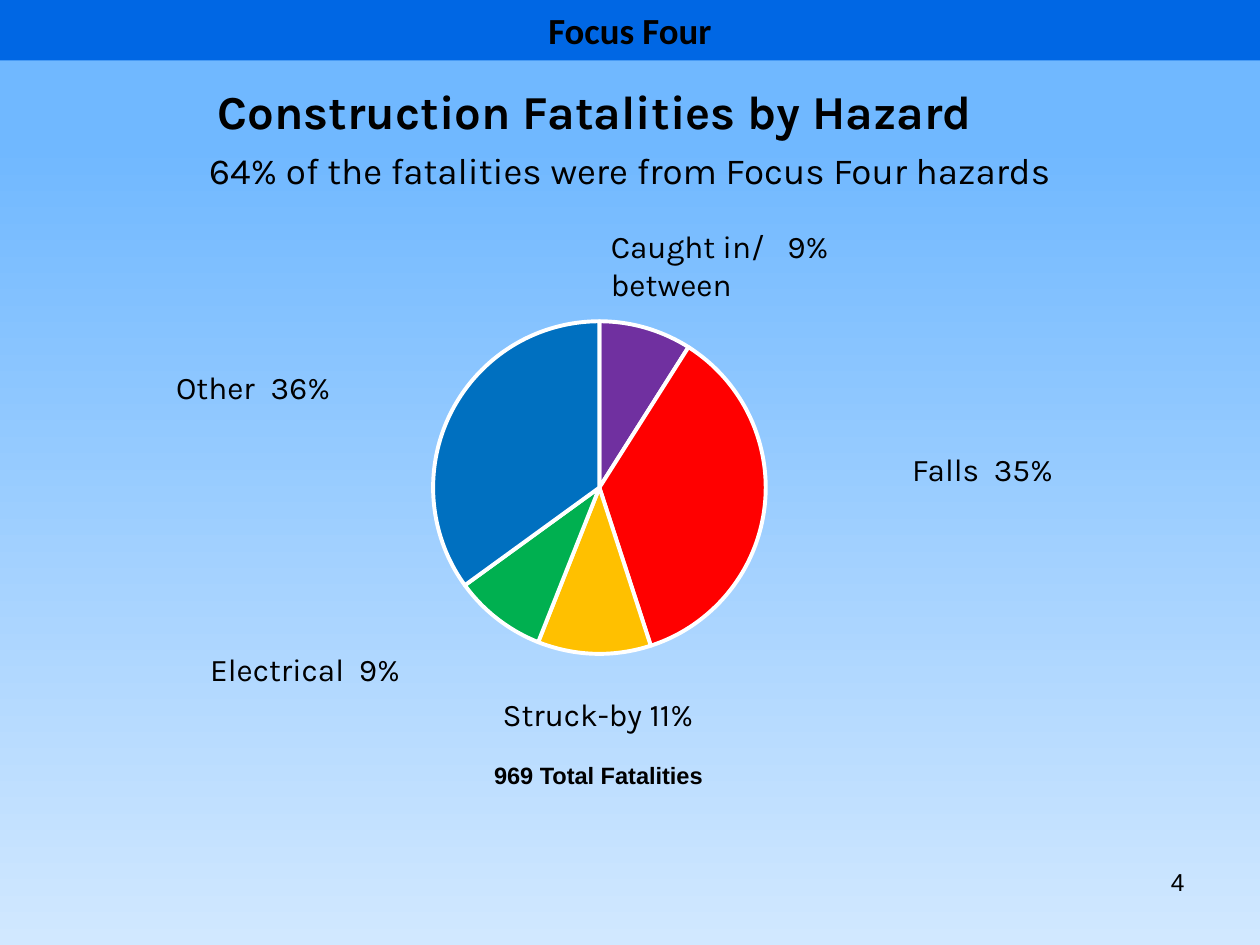
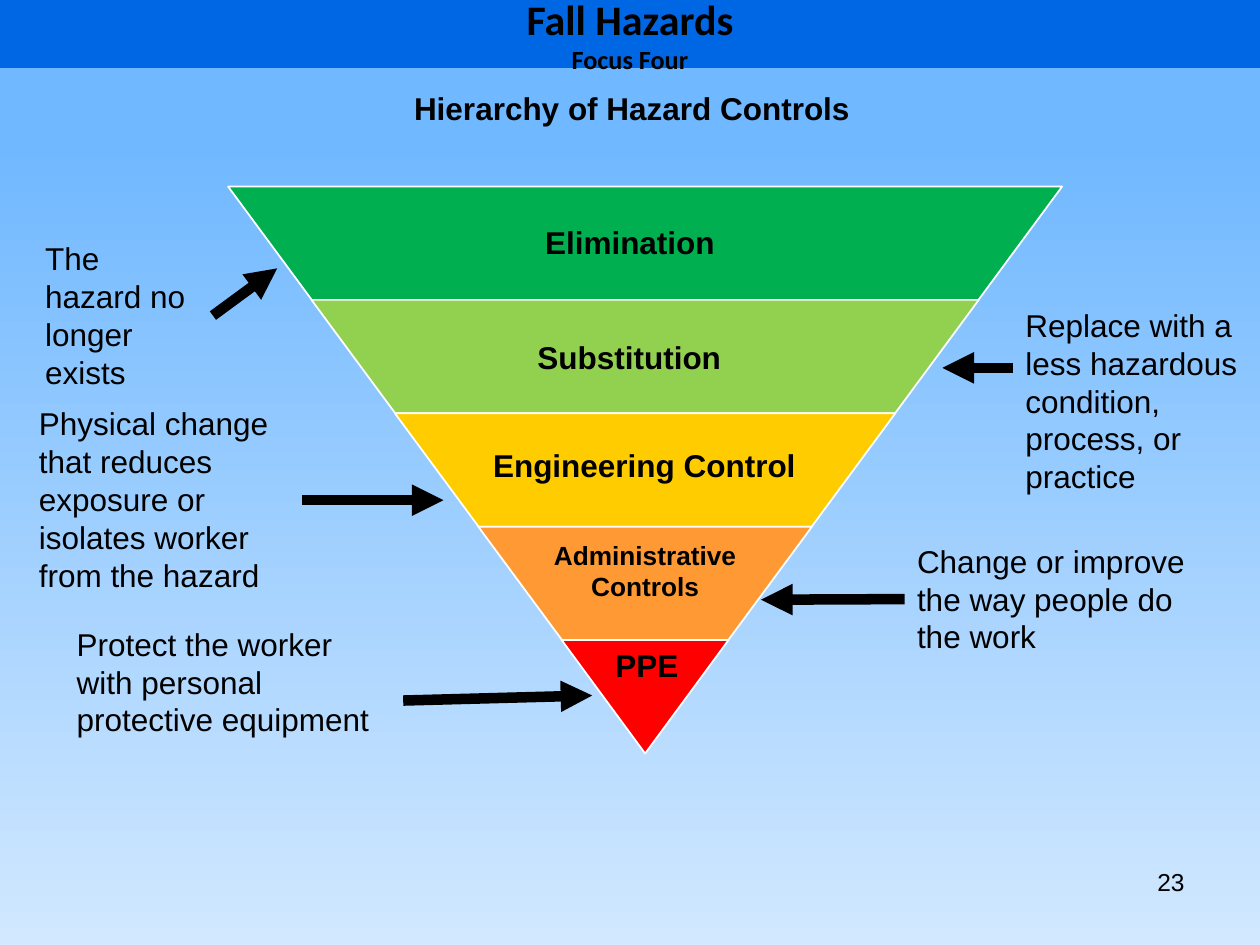
from lxml.etree import SubElement
from pptx import Presentation
from pptx.chart.data import CategoryChartData
from pptx.dml.color import RGBColor
from pptx.enum.chart import XL_CHART_TYPE as ChartType
from pptx.enum.shapes import MSO_CONNECTOR as Connector, MSO_SHAPE as Shape
from pptx.enum.text import MSO_ANCHOR as Anchor, PP_ALIGN as Align
from pptx.oxml import parse_xml
from pptx.oxml.ns import nsdecls, qn
from pptx.util import Inches, Pt

COLORS = {
    "sky_top": "70B8FF", "sky_bottom": "D1E8FF", "band": "0067E4",
    "black": "000000", "white": "FFFFFF", "purple": "7030A0", "red": "FF0000",
    "gold": "FFC000", "green": "00B050", "blue": "0070C0", "lime": "92D050",
    "yellow": "FFCC00", "orange": "FF9933",
}
RIGHT_SIDE, LEFT_SIDE = 3, 1

# Slide 1: category, share, slice colour
FATALITIES = [("1", 9, "purple"), ("2", 36, "red"), ("3", 11, "gold"),
              ("4", 9, "green"), ("5", 35, "blue")]
PIE_BOX = (2.11, 2.53, 5.27, 2.87)
PIE_LAYOUT = {"x": 0.024, "y": 0.007, "w": 0.957, "h": 0.92}
# box, text, tab stop of the percentage
PIE_LABELS = [
    ((3.89, 5.47, 1.85, 0.4), "Struck-by 11%", None),
    ((1.57, 5.11, 1.76, 0.56), "Electrical\t9%", 1.18),
    ((1.3, 2.87, 1.58, 0.4), "Other\t36%", 0.75),
    ((4.75, 1.75, 2.06, 0.71), "Caught in/\t9% between", 1.4),
    ((7.14, 3.52, 1.5, 0.4), "Falls\t35%", 0.65),
]

# Slide 2: colour, label box, label lines, label size
LEVELS = [
    ("green", (4.22, 1.72, 1.56, 0.4), ["Elimination"], 18),
    ("lime", (4.16, 2.63, 1.67, 0.4), ["Substitution"], 18),
    ("yellow", (3.8, 3.49, 2.63, 0.4), ["Engineering Control"], 18),
    ("orange", (4.29, 4.23, 1.66, 0.61), ["Administrative", "Controls"], 15),
    ("red", (4.78, 5.08, 0.71, 0.4), ["PPE"], 18),
]
PYRAMID_LEFT, PYRAMID_TOP, PYRAMID_WIDTH = 1.81, 1.48, 6.62
LEVEL_HEIGHT, LEVEL_SLANT = 0.9, 0.738
# box, text, arrow start, arrow end, joined side of the box
EXPLANATIONS = [
    ((8.04, 2.38, 1.94, 1.62),
     "Replace with a less hazardous condition, process, or practice",
     (8.04, 2.92), (7.48, 2.92), None),
    ((0.26, 1.85, 1.43, 1.31), "The hazard no longer exists",
     (1.69, 2.51), (2.2, 2.13), RIGHT_SIDE),
    ((0.21, 3.16, 2.19, 1.62),
     "Physical change that reduces exposure or isolates worker from the hazard",
     (2.4, 3.97), (3.52, 3.97), RIGHT_SIDE),
    ((7.18, 4.25, 2.33, 1.01), "Change or improve the way people do the work",
     (7.18, 4.76), (6.04, 4.76), LEFT_SIDE),
    ((0.51, 4.91, 2.61, 1.01),
     "Protect the worker with personal protective equipment",
     (3.2, 5.56), (4.7, 5.52), None),
]


def color(name):
    return RGBColor.from_string(COLORS[name])


def inches(values):
    return [Inches(value) for value in values]


def write(shape, lines, sizes, font="Arial", bold=False, align=Align.LEFT):
    """Fill a shape with one paragraph per line, each in its own size."""
    frame = shape.text_frame
    frame.text = "\n".join(lines)
    for paragraph, size in zip(frame.paragraphs, sizes):
        paragraph.alignment = align
        for run in paragraph.runs:
            run.font.name, run.font.size, run.font.bold = font, Pt(size), bold
            run.font.color.rgb = color("black")


def add_text(slide, box, lines, size, wrap=True, **style):
    shape = slide.shapes.add_textbox(*inches(box))
    shape.text_frame.word_wrap = wrap
    write(shape, lines, [size] * len(lines), **style)
    return shape


def add_filled(slide, kind, box, fill):
    shape = slide.shapes.add_shape(kind, *inches(box))
    shape.shadow.inherit = False
    shape.fill.solid()
    shape.fill.fore_color.rgb = color(fill)
    shape.line.fill.background()
    return shape


def add_framed_slide(presentation, titles, sizes, band_height, number):
    """Add a blank slide with the title band and the page number."""
    slide = presentation.slides.add_slide(presentation.slide_layouts[6])
    band = add_filled(slide, Shape.RECTANGLE, (0, 0, 10, band_height), "band")
    frame = band.text_frame
    frame.vertical_anchor = Anchor.MIDDLE
    frame.margin_top = frame.margin_bottom = Inches(0.04)
    write(band, titles, sizes, font="Calibri", bold=True, align=Align.CENTER)
    add_text(slide, (7.17, 6.83, 2.33, 0.52), [number], 14, align=Align.RIGHT)
    return slide


def set_tab(paragraph, position):
    tabs = SubElement(paragraph._p.get_or_add_pPr(), qn("a:tabLst"))
    SubElement(tabs, qn("a:tab"), pos=str(Inches(position)), algn="l")


def add_arrow(slide, start, end):
    arrow = slide.shapes.add_connector(Connector.STRAIGHT, *inches(start + end))
    arrow.line.color.rgb = color("black")
    arrow.line.width = Pt(6)
    SubElement(arrow.line._get_or_add_ln(), qn("a:tailEnd"), type="triangle")
    SubElement(arrow._element.spPr, qn("a:effectLst"))
    return arrow


def add_pie(slide):
    data = CategoryChartData()
    data.categories = [category for category, _, _ in FATALITIES]
    data.add_series("Series 1", [share for _, share, _ in FATALITIES])
    chart = slide.shapes.add_chart(ChartType.PIE, *inches(PIE_BOX), data).chart
    chart.has_legend = chart.has_title = False
    chart.font.name, chart.font.size = "Arial", Pt(10)
    chart.font.color.rgb = color("black")
    plot = chart.plots[0]
    plot.vary_by_categories = True
    for index, (_, _, fill) in enumerate(FATALITIES):
        piece = plot.series[0].points[index].format
        piece.fill.solid()
        piece.fill.fore_color.rgb = color(fill)
        piece.line.color.rgb = color("white")
        piece.line.width = Pt(2.25)
    plot_area = chart._chartSpace.chart.plotArea
    for layout in plot_area.findall(qn("c:layout")):
        plot_area.remove(layout)
    modes = '<c:layoutTarget val="inner"/><c:xMode val="edge"/><c:yMode val="edge"/>'
    sizes = "".join(f'<c:{key} val="{value}"/>' for key, value in PIE_LAYOUT.items())
    plot_area.insert(0, parse_xml(
        f'<c:layout {nsdecls("c")}><c:manualLayout>{modes}{sizes}'
        "</c:manualLayout></c:layout>"))


def build_fatalities(presentation):
    slide = add_framed_slide(presentation, ["Focus Four"], [21], 0.48, "4")
    heading = add_text(slide, (1.63, 0.53, 6.72, 0.69),
                       ["Construction Fatalities by Hazard"], 27,
                       font="Karla", bold=True)
    heading.text_frame.vertical_anchor = Anchor.MIDDLE
    add_text(slide, (1.53, 1.12, 6.94, 0.44),
             ["64% of the fatalities were from Focus Four hazards"], 21,
             font="Karla", align=Align.CENTER)
    add_pie(slide)
    for box, text, tab in PIE_LABELS:
        label = add_text(slide, box, [text], 18, font="Karla")
        if tab:
            set_tab(label.text_frame.paragraphs[0], tab)
    add_text(slide, (2.25, 5.99, 5, 0.33), ["969 Total Fatalities"], 13.5,
             bold=True, align=Align.CENTER)


def build_hierarchy(presentation):
    slide = add_framed_slide(presentation, ["Fall Hazards", "Focus Four"],
                             [24, 15], 0.54, "23")
    add_text(slide, (3.17, 0.66, 3.69, 0.4), ["Hierarchy of Hazard Controls"],
             18, wrap=False, bold=True, align=Align.CENTER)
    inset = PYRAMID_WIDTH / len(LEVELS) / 2
    for index, (fill, label_box, lines, size) in enumerate(LEVELS):
        box = (PYRAMID_LEFT + index * inset, PYRAMID_TOP + index * LEVEL_HEIGHT,
               PYRAMID_WIDTH - 2 * index * inset, LEVEL_HEIGHT)
        level = add_filled(slide, Shape.TRAPEZOID, box, fill)
        level.rotation = 180
        level.adjustments[0] = LEVEL_SLANT
        level.line.color.rgb = color("white")
        level.line.width = Pt(1)
        add_text(slide, label_box, lines, size, wrap=False, bold=True,
                 align=Align.CENTER)
    for box, text, start, end, side in EXPLANATIONS:
        explanation = add_text(slide, box, [text], 18)
        arrow = add_arrow(slide, start, end)
        if side is not None:
            arrow.begin_connect(explanation, side)


def set_background(master):
    fill = master.background.fill
    fill.gradient()
    fill.gradient_angle = 270
    stops = [("sky_top", 0.15), ("sky_bottom", 1)]
    for stop, (name, position) in zip(fill.gradient_stops, stops):
        stop.color.rgb = color(name)
        stop.position = position


def main():
    presentation = Presentation()
    presentation.slide_width, presentation.slide_height = Inches(10), Inches(7.5)
    set_background(presentation.slide_master)
    build_fatalities(presentation)
    build_hierarchy(presentation)
    presentation.save("out.pptx")


if __name__ == "__main__":
    main()
